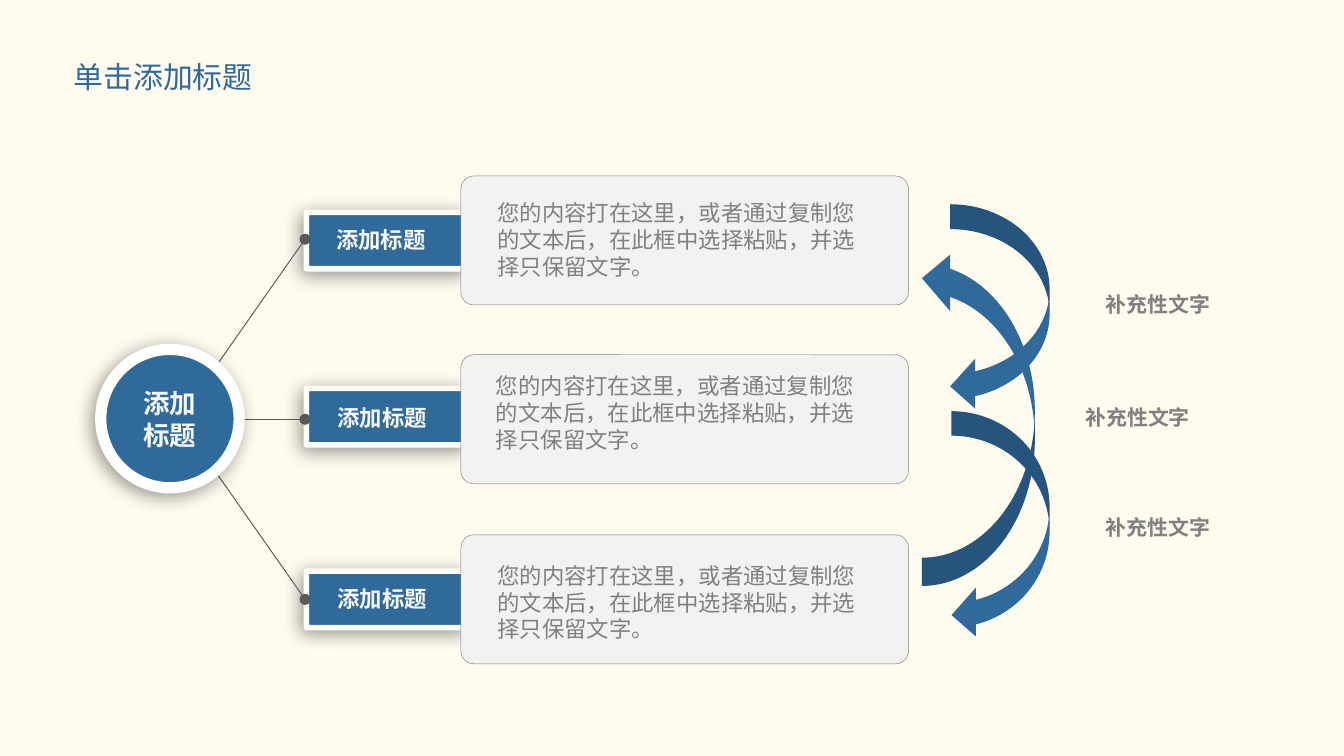
"""Build a slide with one hub, three labelled cards and linking curved arrows."""
import pptx
import pptx.util
import pptx.oxml
import pptx.dml.color
import pptx.enum.shapes
import pptx.enum.text
from lxml import etree

TITLE = "单击添加标题"
HUB = "添加\n标题"
LABEL = "添加标题"
BODY = "您的内容打在这里，或者通过复制您的文本后，在此框中选择粘贴，并选择只保留文字。"
NOTE = "补充性文字"
COLORS = {"back": "FFFBEF", "blue": "306A9B", "white": "FFFFFF", "light": "F8F8F8",
          "card": "F2F2F2", "grey": "808080", "link": "595959"}
ROWS = [
    {"card": 1.31, "tag": 1.58, "label": (2.43, 1.65), "body": (3.63, 1.52), "end": 1.78},
    {"card": 2.64, "tag": 2.89, "label": (2.44, 2.97), "body": (3.62, 2.81), "end": 3.12},
    {"card": 3.98, "tag": 4.25, "label": (2.44, 4.32), "body": (3.63, 4.22), "end": 4.46},
]
ARROWS = [(7.07, 1.52, 0.74, 1.54, False), (7.08, 3.06, 0.73, 1.7, False),
          (6.86, 1.86, 0.84, 2.5, True)]
NOTES = [(7.95, 2.14), (7.8, 2.98), (7.95, 3.8)]
HUB_CENTER = (1.33, 3.12)
LINK_END = 2.27
WIDTH = 10
RATIO = 9 / 16
NS = "http://schemas.openxmlformats.org/drawingml/2006/main"
SHADOW = (f'<a:outerShdw xmlns:a="{NS}" blurRad="127000" dist="38100" dir="8100000" '
          'algn="tr" rotWithShape="0"><a:srgbClr val="000000"><a:alpha val="40000"/>'
          '</a:srgbClr></a:outerShdw>')
SHAPE = pptx.enum.shapes.MSO_SHAPE
ALIGN = pptx.enum.text.PP_ALIGN
ANCHOR = pptx.enum.text.MSO_ANCHOR


def rgb(name):
    return pptx.dml.color.RGBColor.from_string(COLORS[name])


def inches(*values):
    return [pptx.util.Inches(v) for v in values]


def write(sp, text, size, color, bold=False, align=ALIGN.LEFT, anchor=ANCHOR.MIDDLE,
          font="Calibri", margins=(0.07, 0.03)):
    tf = sp.text_frame
    tf.text = text
    tf.word_wrap = True
    tf.auto_size = pptx.enum.text.MSO_AUTO_SIZE.NONE
    tf.vertical_anchor = anchor
    tf.margin_left = tf.margin_right = pptx.util.Inches(margins[0])
    tf.margin_top = tf.margin_bottom = pptx.util.Inches(margins[1])
    for p in tf.paragraphs:
        p.alignment = align
        for r in p.runs:
            r.font.size = pptx.util.Pt(size)
            r.font.bold = bold
            r.font.name = font
            r.font.color.rgb = rgb(color)
            ea = etree.SubElement(r.font._element, f"{{{NS}}}ea")
            ea.set("typeface", font)


def add_text(s, box, *args, **kwargs):
    write(s.shapes.add_textbox(*inches(*box)), *args, **kwargs)


def add_shape(s, kind, box, fill, line=None, width=0, shadow=False):
    sp = s.shapes.add_shape(kind, *inches(*box))
    sp.shadow.inherit = False
    sp.fill.solid()
    sp.fill.fore_color.rgb = rgb(fill)
    if line:
        sp.line.color.rgb = rgb(line)
        sp.line.width = pptx.util.Pt(width)
    else:
        sp.line.fill.background()
    if shadow:
        sp._element.spPr.find(f"{{{NS}}}effectLst").append(pptx.oxml.parse_xml(SHADOW))
    return sp


def add_link(s, start, end):
    kind = pptx.enum.shapes.MSO_CONNECTOR.STRAIGHT
    link = s.shapes.add_connector(kind, *inches(*start, *end))
    link.line.color.rgb = rgb("link")
    link.line.width = pptx.util.Pt(0.5)
    ln = link.line._get_or_add_ln()
    for tag in ("headEnd", "tailEnd"):
        etree.SubElement(ln, f"{{{NS}}}{tag}").set("type", "oval")
    etree.SubElement(link._element.spPr, f"{{{NS}}}effectLst")


def main():
    prs = pptx.Presentation()
    prs.slide_width, prs.slide_height = inches(WIDTH, WIDTH * RATIO)
    s = prs.slides.add_slide(prs.slide_layouts[5])
    s.background.fill.solid()
    s.background.fill.fore_color.rgb = rgb("back")

    title = s.shapes.title
    title.left, title.top, title.width, title.height = inches(0.45, 0.39, 1.93, 0.37)
    write(title, TITLE, 16, "blue", anchor=ANCHOR.TOP, font="Noto Sans CJK SC",
          margins=(0.1, 0.05))

    for row in ROWS:
        add_shape(s, SHAPE.PENTAGON, (2.28, row["tag"], 1.38, 0.42), "blue", "white", 3, True)
        add_text(s, (*row["label"], 1.15, 0.27), LABEL, 12, "light", bold=True)
        add_link(s, HUB_CENTER, (LINK_END, row["end"]))

    hub = add_shape(s, SHAPE.OVAL, (0.75, 2.6, 1.03, 1.03), "blue", "white", 6, True)
    write(hub, HUB, 14.2, "light", bold=True, align=ALIGN.CENTER)

    for *box, upward in ARROWS:
        arrow = add_shape(s, SHAPE.CURVED_LEFT_ARROW, box, "blue")
        if upward:
            arrow.rotation = 180
            arrow._element.spPr.xfrm.set("flipH", "1")

    for place in NOTES:
        add_text(s, (*place, 1.33, 0.26), NOTE, 11.2, "grey", bold=True,
                 align=ALIGN.CENTER, anchor=ANCHOR.TOP)

    for row in ROWS:
        card = add_shape(s, SHAPE.ROUNDED_RECTANGLE, (3.43, row["card"], 3.33, 0.96),
                         "card", "grey", 0.25)
        card.adjustments[0] = 0.1
        add_text(s, (*row["body"], 2.91, 0.52), BODY, 12, "grey")

    prs.save("out.pptx")


if __name__ == "__main__":
    main()
